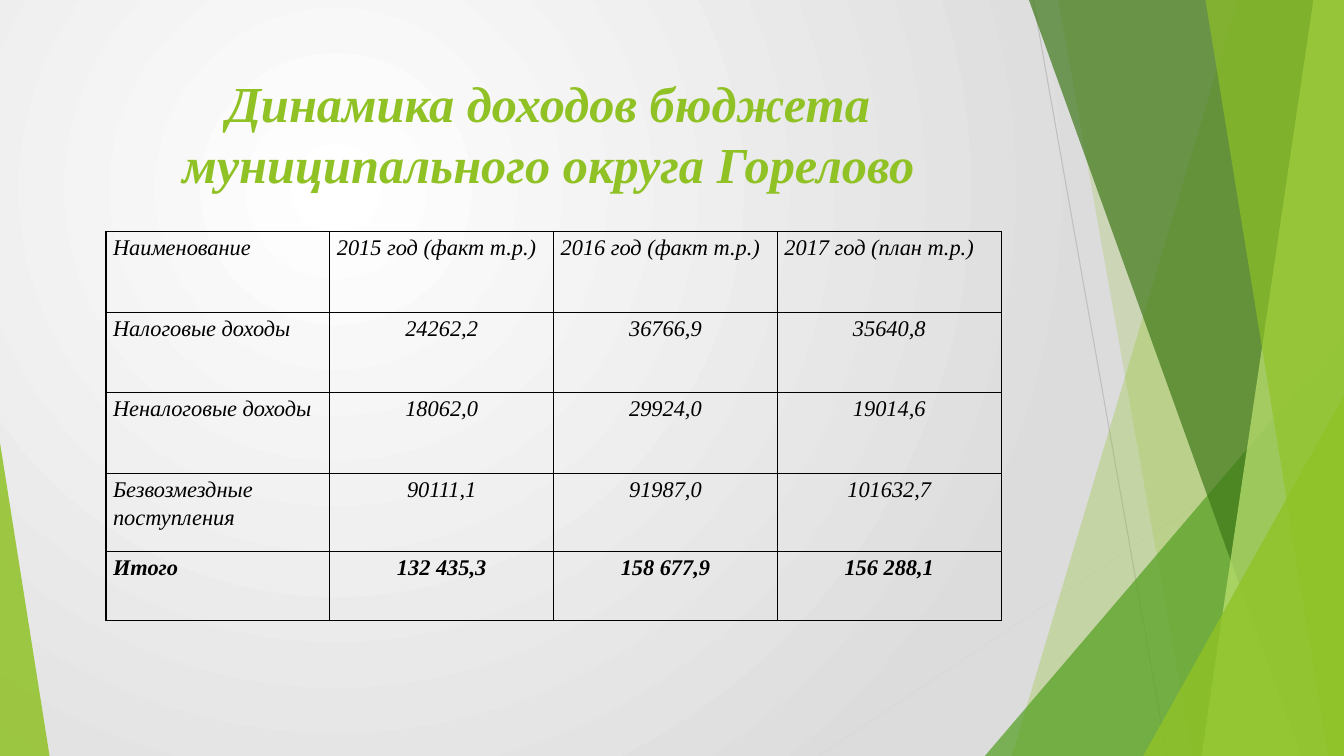
from lxml.etree import SubElement
from pptx import Presentation
from pptx.dml.color import RGBColor
from pptx.enum.shapes import MSO_CONNECTOR as CONNECTOR, MSO_SHAPE as SHAPE
from pptx.enum.text import MSO_ANCHOR as ANCHOR, PP_ALIGN as ALIGN
from pptx.oxml.ns import qn
from pptx.util import Cm, Pt

WIDTH, HEIGHT = 33.87, 19.05
GREEN = "90C226"
FONT = "Times New Roman"

ROWS = [
    ["Наименование", "2015 год (факт т.р.)", "2016 год (факт т.р.)", "2017 год (план т.р.)"],
    ["Налоговые доходы", "24262,2", "36766,9", "35640,8"],
    ["Неналоговые доходы", "18062,0", "29924,0", "19014,6"],
    ["Безвозмездные\nпоступления", "90111,1", "91987,0", "101632,7"],
    ["Итого", "132 435,3", "158 677,9", "156 288,1"],
]
ROW_HEIGHTS = [2.03, 2.03, 2.03, 1.98, 1.72]
COL_WIDTH = 5.64


def rgb(color):
    return RGBColor.from_string(color)


def set_background(s):
    fill = s.background.fill
    fill.gradient()
    for stop, color in zip(fill.gradient_stops, ("FFFFFF", "DCDCDC")):
        stop.color.rgb = rgb(color)
    grad = s.background._cSld.find(".//" + qn("a:gradFill"))
    grad.remove(grad.find(qn("a:lin")))
    circle = SubElement(grad, qn("a:path"), {"path": "circle"})
    SubElement(circle, qn("a:fillToRect"),
               {"l": "50000", "t": "50000", "r": "100000", "b": "100000"})


def paint(sp, color, opacity):
    sp.shadow.inherit = False
    sp.line.fill.background()
    sp.fill.solid()
    sp.fill.fore_color.rgb = rgb(color)
    srgb = sp._element.spPr.find(".//" + qn("a:srgbClr"))
    SubElement(srgb, qn("a:alpha"), {"val": str(opacity * 1000)})


def add_ray(s, x1, y1, x2, y2, color):
    line = s.shapes.add_connector(CONNECTOR.STRAIGHT, Cm(x1), Cm(y1), Cm(x2), Cm(y2))
    line.line.color.rgb = rgb(color)
    line.line.width = Pt(0.75)
    SubElement(line._element.spPr, qn("a:effectLst"))


def add_facet(s, top_x, bottom_x, color, opacity):
    builder = s.shapes.build_freeform(Cm(top_x), 0)
    corners = [(WIDTH, 0), (WIDTH, HEIGHT), (bottom_x, HEIGHT)]
    builder.add_line_segments([(Cm(x), Cm(y)) for x, y in corners])
    paint(builder.convert_to_shape(), color, opacity)


def add_corner(s, x, y, width, apex, color, opacity):
    sp = s.shapes.add_shape(SHAPE.ISOSCELES_TRIANGLE, Cm(x), Cm(y), Cm(width), Cm(HEIGHT - y))
    sp.adjustments[0] = apex
    paint(sp, color, opacity)


def add_run(p, text, size, color, bold):
    r = p.add_run()
    r.text = text
    r.font.name = FONT
    r.font.size = Pt(size)
    r.font.color.rgb = rgb(color)
    r.font.bold = bold
    r.font.italic = True


def add_title(s, text):
    tf = s.shapes.add_textbox(Cm(1.88), Cm(1.7), Cm(23.88), Cm(3.66)).text_frame
    tf.word_wrap = True
    tf.vertical_anchor = ANCHOR.TOP
    p = tf.paragraphs[0]
    p.alignment = ALIGN.CENTER
    add_run(p, text, 36, GREEN, True)


def add_borders(cell):
    tc_pr = cell._tc.get_or_add_tcPr()
    for side in ("lnL", "lnR", "lnT", "lnB"):
        ln = SubElement(tc_pr, qn("a:" + side), {"w": str(Pt(1))})
        SubElement(SubElement(ln, qn("a:solidFill")), qn("a:srgbClr"), {"val": "000000"})


def fill_cell(cell, text, alignment, bold):
    add_borders(cell)
    cell.fill.background()
    cell.margin_left = cell.margin_right = Cm(0.18)
    cell.margin_top = cell.margin_bottom = 0
    tf = cell.text_frame
    for i, part in enumerate(text.split("\n")):
        p = tf.add_paragraph() if i else tf.paragraphs[0]
        p.alignment = alignment
        p.line_spacing = 1.15
        add_run(p, part, 16, "000000", bold)


def add_income_table(s):
    cols = len(ROWS[0])
    table = s.shapes.add_table(len(ROWS), cols, Cm(2.67), Cm(5.84),
                               Cm(COL_WIDTH * cols), Cm(sum(ROW_HEIGHTS))).table
    table.first_row = table.horz_banding = False
    for col in table.columns:
        col.width = Cm(COL_WIDTH)
    for i, (row, height) in enumerate(zip(ROWS, ROW_HEIGHTS)):
        table.rows[i].height = Cm(height)
        for j, text in enumerate(row):
            alignment = ALIGN.CENTER if i and j else ALIGN.LEFT
            fill_cell(table.cell(i, j), text, alignment, i == len(ROWS) - 1)


def main():
    prs = Presentation()
    prs.slide_width, prs.slide_height = Cm(WIDTH), Cm(HEIGHT)
    s = prs.slides.add_slide(prs.slide_layouts[6])
    set_background(s)
    add_ray(s, 26.04, 0, 29.41, HEIGHT, "BFBFBF")
    add_ray(s, WIDTH, 10.24, 20.62, HEIGHT, "D9D9D9")
    add_facet(s, 31.19, 25.5, GREEN, 30)
    add_facet(s, 26.67, 30.05, GREEN, 20)
    add_corner(s, 24.82, 8.46, 9.05, 1, "54A021", 72)
    add_facet(s, 25.93, 32.79, "3F7819", 70)
    add_facet(s, 33.1, 30.28, "C0E474", 70)
    add_facet(s, 30.38, 33.48, GREEN, 65)
    add_corner(s, 28.81, 9.98, 5.06, 1, GREEN, 80)
    add_corner(s, 0, 11.15, 1.25, 0, GREEN, 85)
    add_title(s, "Динамика доходов бюджета муниципального округа Горелово")
    add_income_table(s)
    prs.save("out.pptx")


if __name__ == "__main__":
    main()
